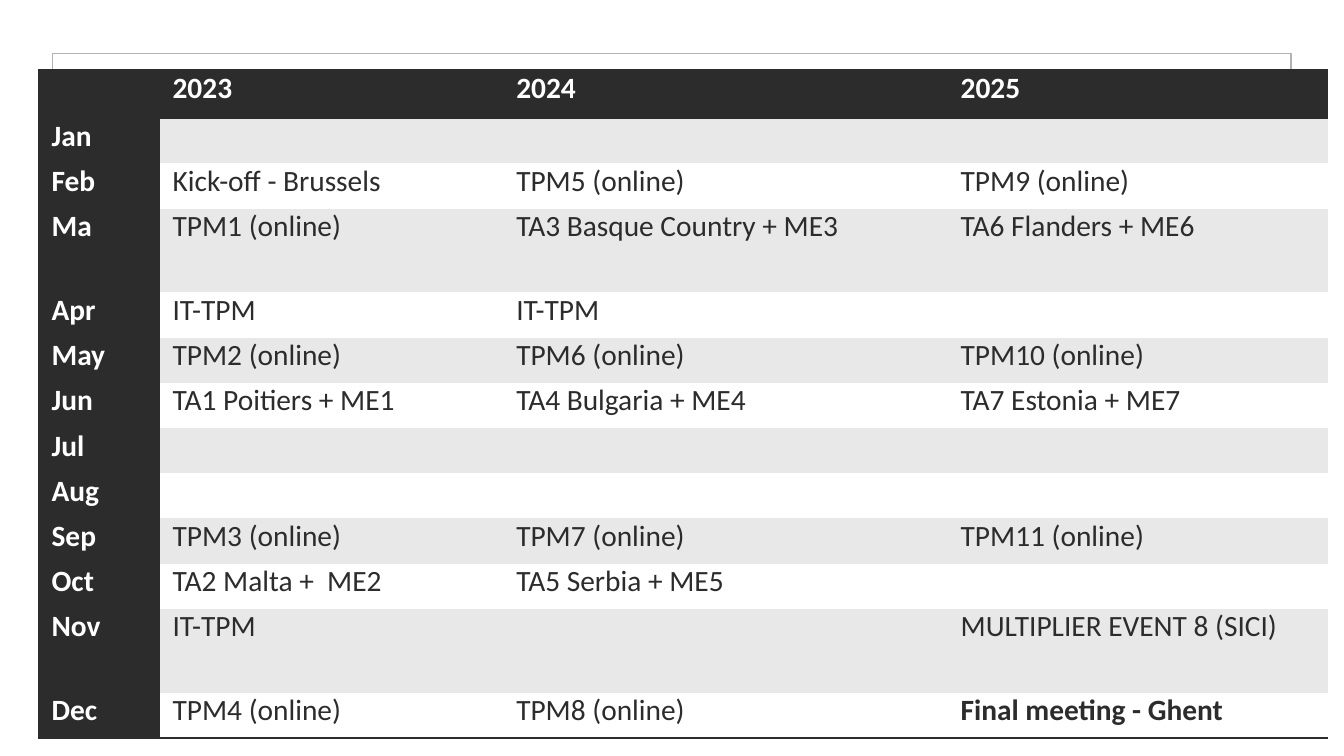
from pptx import Presentation
from pptx.dml.color import RGBColor
from pptx.enum.shapes import MSO_SHAPE
from pptx.oxml import parse_xml
from pptx.oxml.ns import nsdecls, qn
from pptx.util import Cm, Pt

COLORS = {"dark": "2C2C2C", "band": "E8E8E8", "white": "FFFFFF", "frame": "B2B2B2"}
NO_GRID_STYLE = "{2D5ABB26-0587-4C30-8999-92F81FD0307C}"

SCHEDULE = [
    ("", "2023", "2024", "2025"),
    ("Jan", "", "", ""),
    ("Feb", "Kick-off - Brussels", "TPM5 (online)", "TPM9 (online)"),
    ("Ma", "TPM1 (online)", "TA3 Basque Country + ME3", "TA6 Flanders + ME6"),
    ("Apr", "IT-TPM", "IT-TPM", ""),
    ("May", "TPM2 (online)", "TPM6 (online)", "TPM10 (online)"),
    ("Jun", "TA1 Poitiers + ME1", "TA4 Bulgaria + ME4", "TA7 Estonia + ME7"),
    ("Jul", "", "", ""),
    ("Aug", "", "", ""),
    ("Sep", "TPM3 (online)", "TPM7 (online)", "TPM11 (online)"),
    ("Oct", "TA2 Malta +  ME2", "TA5 Serbia + ME5", ""),
    ("Nov", "IT-TPM", "", "MULTIPLIER EVENT 8 (SICI)"),
    ("Dec", "TPM4 (online)", "TPM8 (online)", "Final meeting - Ghent"),
]
COLUMN_WIDTHS = [3.05, 8.66, 11.2, 9.6]
HEADER_HEIGHT, MONTH_HEIGHT, TALL_HEIGHT = 1.2, 1.14, 2.11
TALL_MONTHS = ("Ma", "Nov")


def rgb(name):
    return RGBColor.from_string(COLORS[name])


def add_border(cell, side):
    cell._tc.get_or_add_tcPr().append(parse_xml(
        f'<a:ln{side} {nsdecls("a")} w="25400"><a:solidFill>'
        f'<a:srgbClr val="{COLORS["dark"]}"/></a:solidFill></a:ln{side}>'))


prs = Presentation()
prs.slide_width, prs.slide_height = Cm(33.87), Cm(19.05)
slide = prs.slides.add_slide(prs.slide_layouts[6])
slide.background.fill.solid()
slide.background.fill.fore_color.rgb = rgb("white")

# Outlined panel behind the calendar
panel = slide.shapes.add_shape(MSO_SHAPE.RECTANGLE, Cm(1.32), Cm(1.35), Cm(31.22), Cm(16.38))
panel.shadow.inherit = False
panel.fill.solid()
panel.fill.fore_color.rgb = rgb("white")
panel.line.color.rgb = rgb("frame")
panel.line.width = Pt(1)

# Calendar grid
heights = [HEADER_HEIGHT] + [
    TALL_HEIGHT if month in TALL_MONTHS else MONTH_HEIGHT for month, *_ in SCHEDULE[1:]]
calendar = slide.shapes.add_table(
    len(SCHEDULE), len(COLUMN_WIDTHS), Cm(0.97), Cm(1.78),
    Cm(sum(COLUMN_WIDTHS)), Cm(sum(heights))).table
calendar.first_col = True
calendar._tbl.tblPr.find(qn("a:tableStyleId")).text = NO_GRID_STYLE
for column, width in zip(calendar.columns, COLUMN_WIDTHS):
    column.width = Cm(width)
for row, height in zip(calendar.rows, heights):
    row.height = Cm(height)

# Months down, years across, with alternating bands
last_row = len(SCHEDULE) - 1
for r, entries in enumerate(SCHEDULE):
    for c, entry in enumerate(entries):
        cell = calendar.cell(r, c)
        heading = r == 0 or c == 0
        if r == 0:
            add_border(cell, "T")
        if r in (0, last_row):
            add_border(cell, "B")
        cell.fill.solid()
        cell.fill.fore_color.rgb = rgb("dark" if heading else "band" if r % 2 else "white")
        cell.margin_left = cell.margin_right = Cm(0.33)
        cell.margin_top = cell.margin_bottom = 0
        cell.text = entry
        font = cell.text_frame.paragraphs[0].font
        font.name = "Calibri"
        font.size = Pt(21)
        font.bold = heading or entry.startswith("Final")
        font.color.rgb = rgb("white" if heading else "dark")

prs.save("out.pptx")
